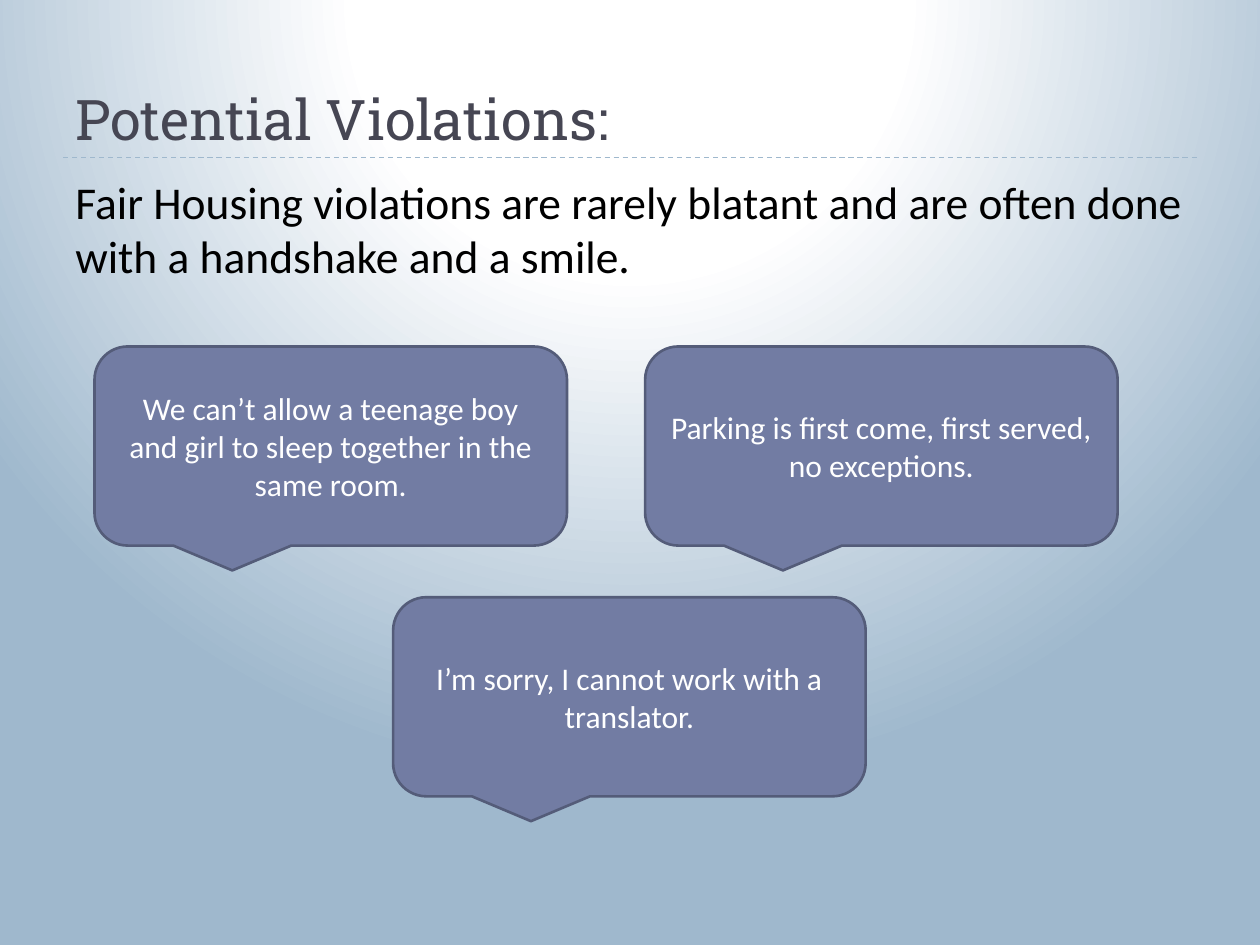
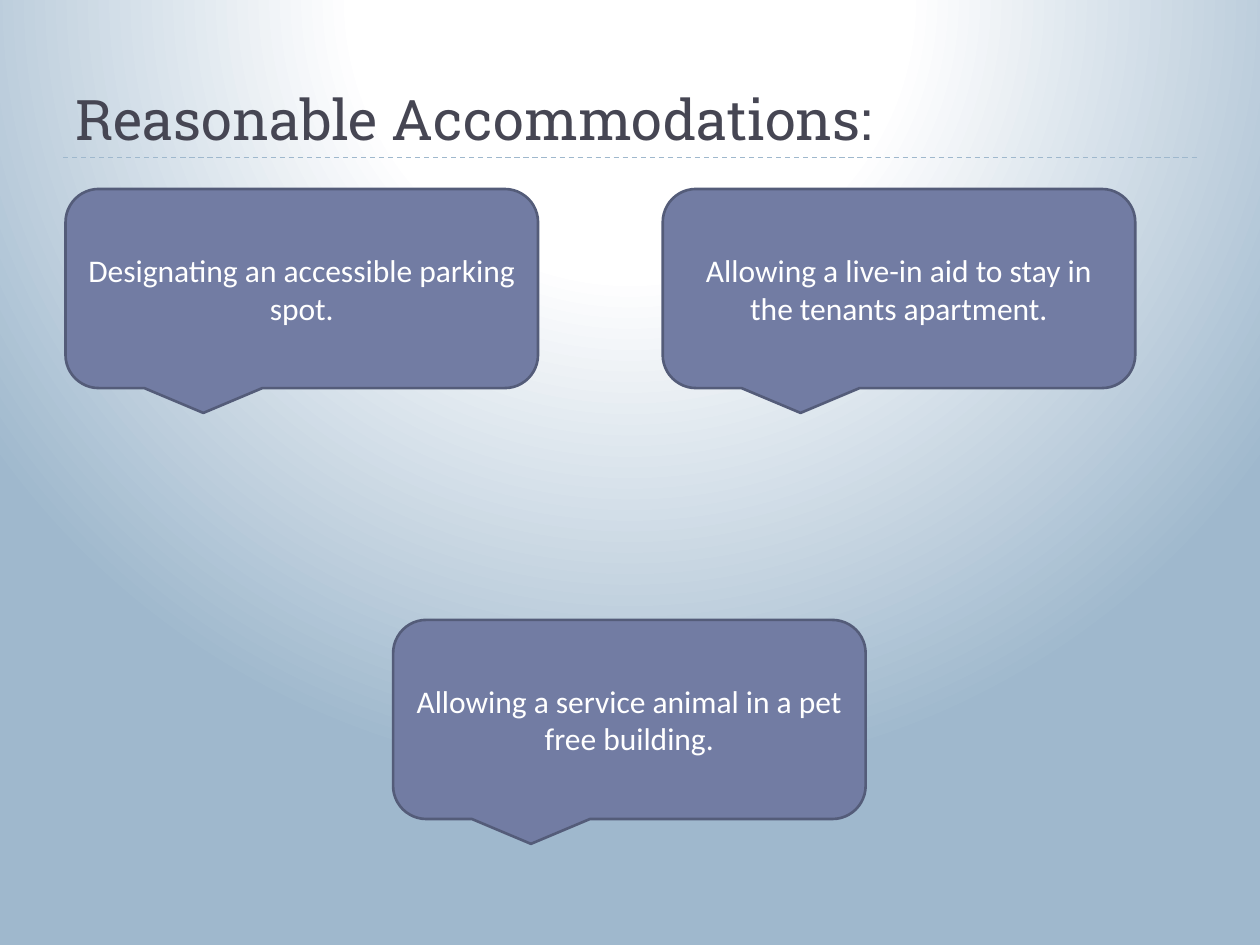
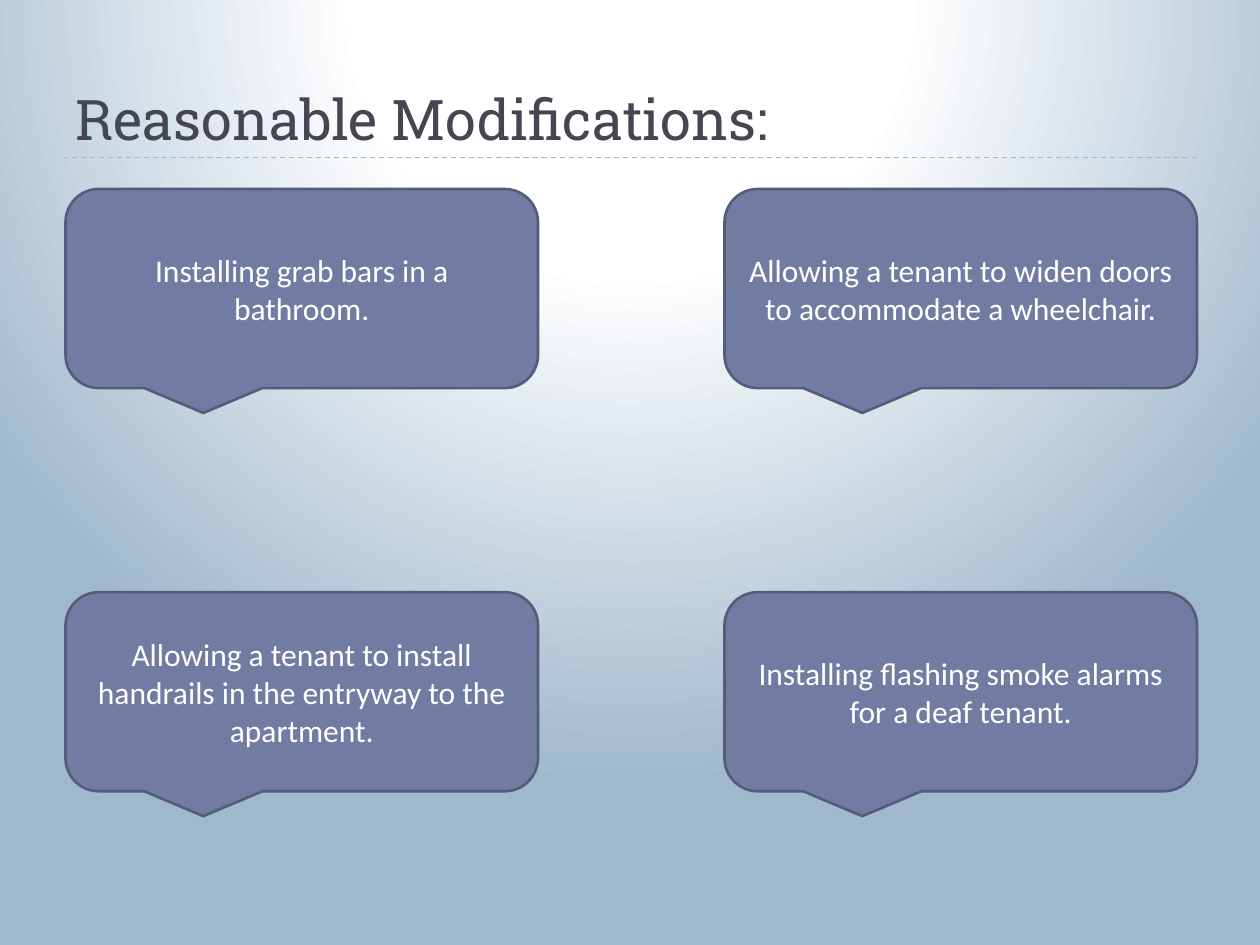
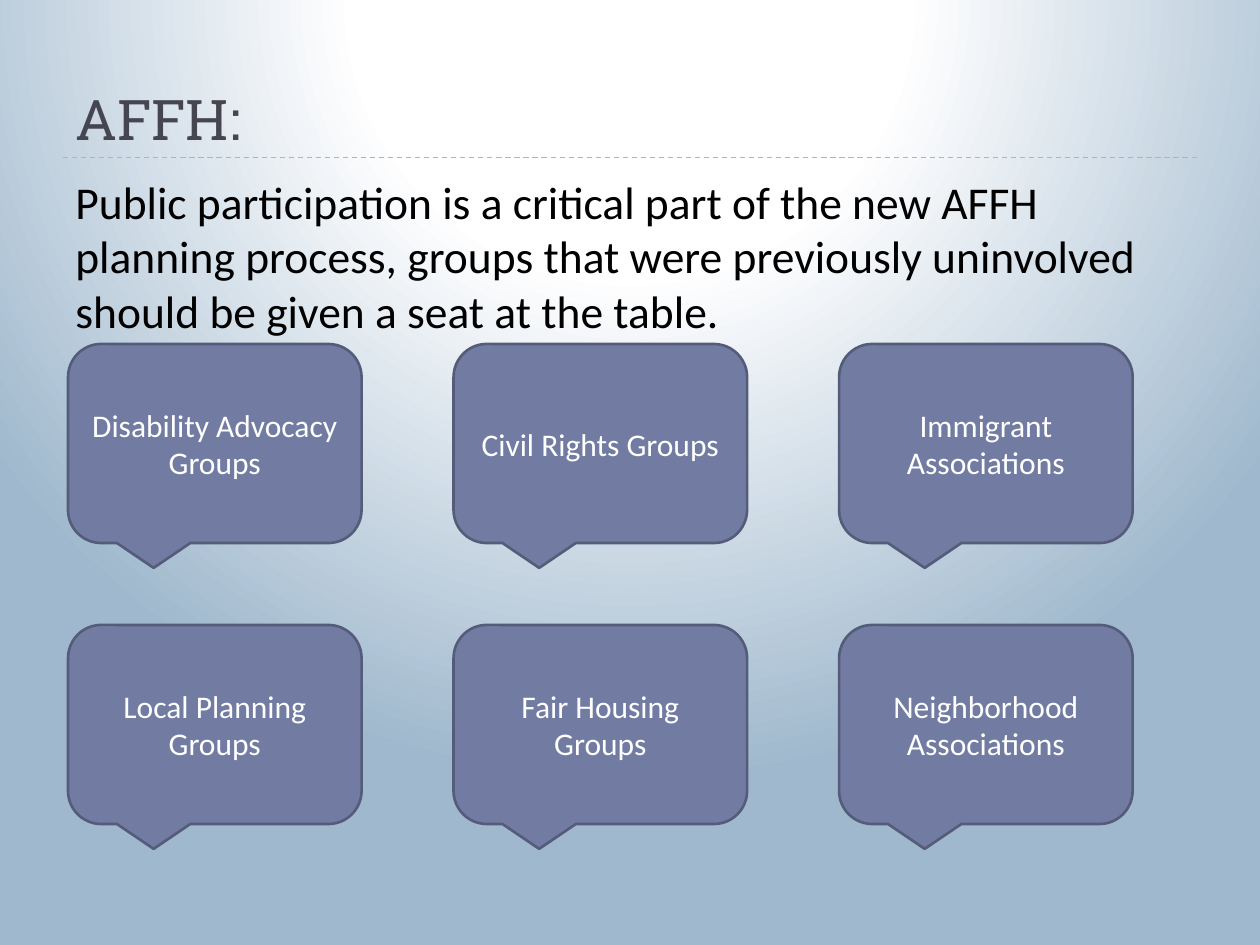
from dataclasses import dataclass
from itertools import product

from lxml import etree
from pptx import Presentation
from pptx.dml.color import RGBColor
from pptx.enum.dml import MSO_LINE
from pptx.enum.shapes import MSO_CONNECTOR, MSO_SHAPE
from pptx.enum.text import MSO_ANCHOR, PP_ALIGN
from pptx.oxml import parse_xml
from pptx.oxml.ns import nsdecls, qn
from pptx.util import Inches, Pt

STRAIGHT = MSO_CONNECTOR.STRAIGHT
CALLOUT = MSO_SHAPE.ROUNDED_RECTANGULAR_CALLOUT
TRIANGLE = MSO_SHAPE.ISOSCELES_TRIANGLE
DASH = MSO_LINE.DASH
TOP, MIDDLE, BOTTOM = MSO_ANCHOR.TOP, MSO_ANCHOR.MIDDLE, MSO_ANCHOR.BOTTOM
LEFT, CENTER = PP_ALIGN.LEFT, PP_ALIGN.CENTER


@dataclass(frozen=True)
class Theme:
    white: str = "FFFFFF"
    mist: str = "9FB8CD"
    title_color: str = "464653"
    body_color: str = "000000"
    callout_fill: str = "727CA3"
    callout_line: str = "545C79"
    title_font: str = "Roboto Slab"
    body_font: str = "Calibri"
    title_size: int = 32
    body_size: int = 26
    callout_size: int = 18
    rule_width: float = 0.75
    outline_width: float = 1.5


@dataclass(frozen=True)
class Box:
    """A rectangle in inches."""
    left: float
    top: float
    width: float
    height: float

    def lengths(self):
        return [Inches(n) for n in (self.left, self.top, self.width, self.height)]


THEME = Theme()
TITLE_BOX = Box(0.5, 0.17, 9, 1.08)
BODY_BOX = Box(0.5, 1.33, 9, 5.4)
FOOTER_BOX = Box(0.5, 6.95, 9, 0.4)
CALLOUT_HEIGHT = 1.58
WIDE, NARROW = 3.75, 2.33


def color(value):
    return RGBColor.from_string(value)


def set_background(master):
    """Give every slide a glow that starts above its top edge."""
    master.background.fill.gradient()
    gradient = master.element.find(".//" + qn("a:gradFill"))
    stops = "".join(
        f'<a:gs pos="{percent * 1000}"><a:srgbClr val="{value}"/></a:gs>'
        for percent, value in ((0, THEME.white), (35, THEME.white), (100, THEME.mist)))
    glow = parse_xml(
        f'<a:gradFill {nsdecls("a")} rotWithShape="1"><a:gsLst>{stops}</a:gsLst>'
        '<a:path path="circle">'
        '<a:fillToRect l="50000" t="-80000" r="50000" b="180000"/>'
        '</a:path></a:gradFill>')
    gradient.getparent().replace(gradient, glow)


def write_text(shape, text, font, size, text_color, anchor=TOP, alignment=LEFT):
    frame = shape.text_frame
    frame.word_wrap = True
    frame.vertical_anchor = anchor
    paragraph = frame.paragraphs[0]
    paragraph.text = text
    paragraph.alignment = alignment
    paragraph.font.name = font
    paragraph.font.size = Pt(size)
    paragraph.font.color.rgb = color(text_color)


def add_rule(slide, left, top, width):
    rule = slide.shapes.add_connector(
        STRAIGHT, Inches(left), Inches(top), Inches(left + width), Inches(top))
    rule.line.color.rgb = color(THEME.mist)
    rule.line.width = Pt(THEME.rule_width)
    rule.line.dash_style = DASH
    etree.SubElement(rule.element.spPr, qn("a:effectLst"))


def add_footer(slide, box):
    add_rule(slide, box.left, box.top, box.width)
    marker_box = Box(box.left - 0.04, box.top + 0.12, 0.21, 0.13)
    marker = slide.shapes.add_shape(TRIANGLE, *marker_box.lengths())
    marker.rotation = 90
    marker.shadow.inherit = False
    marker.fill.solid()
    marker.fill.fore_color.rgb = color(THEME.mist)
    marker.line.fill.background()


def add_title(slide, box, text):
    add_rule(slide, box.left, box.top + box.height, box.width)
    title = slide.shapes.add_textbox(*box.lengths())
    write_text(title, text, THEME.title_font, THEME.title_size,
               THEME.title_color, BOTTOM)


def add_body(slide, box, text):
    body = slide.shapes.add_textbox(*box.lengths())
    write_text(body, text, THEME.body_font, THEME.body_size, THEME.body_color)


def add_callout(slide, box, text):
    callout = slide.shapes.add_shape(CALLOUT, *box.lengths())
    callout.shadow.inherit = False
    callout.fill.solid()
    callout.fill.fore_color.rgb = color(THEME.callout_fill)
    callout.line.color.rgb = color(THEME.callout_line)
    callout.line.width = Pt(THEME.outline_width)
    write_text(callout, text, THEME.body_font, THEME.callout_size,
               THEME.white, MIDDLE, CENTER)


def grid(lefts, tops):
    """Return the corners of a grid, row by row."""
    return [(left, top) for top, left in product(tops, lefts)]


def add_callout_slide(presentation, title, corners, width, texts, body=None):
    slide = presentation.slides.add_slide(presentation.slide_layouts[6])
    add_footer(slide, FOOTER_BOX)
    add_title(slide, TITLE_BOX, title)
    if body:
        add_body(slide, BODY_BOX, body)
    for (left, top), text in zip(corners, texts):
        add_callout(slide, Box(left, top, width, CALLOUT_HEIGHT), text)


def main():
    presentation = Presentation()
    presentation.slide_width = Inches(10)
    presentation.slide_height = Inches(7.5)
    set_background(presentation.slide_master)

    add_callout_slide(
        presentation, "Potential Violations:",
        grid([0.75, 5.12], [2.75]) + [(3.12, 4.74)], WIDE,
        ["We can’t allow a teenage boy and girl to sleep together in the same room.",
         "Parking is first come, first served, no exceptions.",
         "I’m sorry, I cannot work with a translator."],
        body="Fair Housing violations are rarely blatant and are often done "
             "with a handshake and a smile.")
    add_callout_slide(
        presentation, "Reasonable Accommodations:",
        grid([0.52, 5.26], [1.5]) + [(3.12, 4.92)], WIDE,
        ["Designating an accessible parking spot.",
         "Allowing a live-in aid to stay in the tenants apartment.",
         "Allowing a service animal in a pet free building."])
    add_callout_slide(
        presentation, "Reasonable Modifications:",
        grid([0.52, 5.75], [1.5, 4.7]), WIDE,
        ["Installing grab bars in a bathroom.",
         "Allowing a tenant to widen doors to accommodate a wheelchair.",
         "Allowing a tenant to install handrails in the entryway to the apartment.",
         "Installing flashing smoke alarms for a deaf tenant."])
    add_callout_slide(
        presentation, "AFFH:",
        grid([0.54 + 3.06 * column for column in range(3)], [2.73, 4.96]), NARROW,
        ["Disability Advocacy Groups", "Civil Rights Groups",
         "Immigrant Associations", "Local Planning Groups",
         "Fair Housing Groups", "Neighborhood Associations"],
        body="Public participation is a critical part of the new AFFH planning "
             "process, groups that were previously uninvolved should be given "
             "a seat at the table.")

    presentation.save("out.pptx")


if __name__ == "__main__":
    main()
